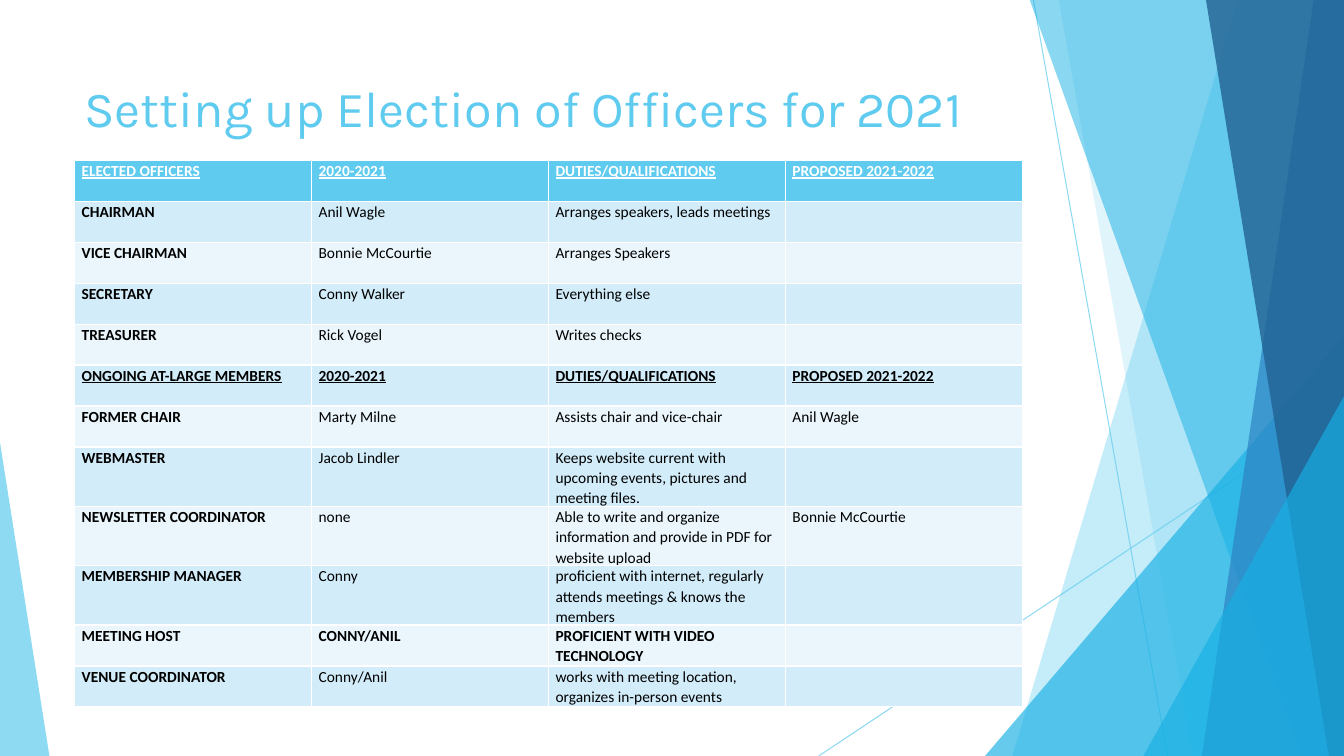
"""Build the slide that lists officers, duties and proposals for the 2021 election."""
from dataclasses import astuple, dataclass

from lxml.etree import SubElement
from pptx import Presentation
from pptx.dml.color import RGBColor
from pptx.enum.shapes import MSO_CONNECTOR, MSO_SHAPE
from pptx.enum.text import MSO_ANCHOR
from pptx.oxml.ns import qn
from pptx.shapes.autoshape import Shape
from pptx.shapes.connector import Connector
from pptx.shapes.shapetree import SlideShapes
from pptx.table import _Cell
from pptx.util import Inches, Pt

WIDTH, HEIGHT = 13.33, 7.5
LEFT, CONTENT_WIDTH = 0.74, 9.4
SKY, CYAN, BLUE, NAVY = "5FCBEF", "17B0E4", "2E83C3", "226292"
WHITE, BLACK = "FFFFFF", "000000"
BANDS = ("EAF6FC", "D2ECF9")


@dataclass
class Ray:
    start: tuple[float, float]
    end: tuple[float, float]


@dataclass
class Pane:
    top_x: float
    bottom_x: float
    color: str
    opacity: int


@dataclass
class Wedge:
    left: float
    top: float
    width: float
    apex: float
    color: str
    opacity: int


@dataclass
class Office:
    role: str
    holder: str
    duties: str
    proposed: str = ""


RAYS = [Ray((10.25, 0), (11.58, HEIGHT)), Ray((WIDTH, 4.03), (8.12, HEIGHT))]
FACETS = [
    Pane(12.28, 10.04, SKY, 36),
    Pane(10.5, 11.83, SKY, 20),
    Wedge(9.77, 3.33, 3.56, 1, CYAN, 66),
    Pane(10.21, 12.91, CYAN, 50),
    Pane(13.03, 11.92, BLUE, 70),
    Pane(11.96, 13.18, NAVY, 80),
    Wedge(11.34, 3.93, 1.99, 1, CYAN, 66),
    Wedge(0, 4.39, 0.49, 0, SKY, 70),
]
COLUMN_HEADS = ("2020-2021", "DUTIES/QUALIFICATIONS", "PROPOSED 2021-2022")
ELECTED = Office("ELECTED OFFICERS", *COLUMN_HEADS)
AT_LARGE = Office("ONGOING AT-LARGE MEMBERS", *COLUMN_HEADS)
HOST = Office("MEETING HOST", "CONNY/ANIL", "PROFICIENT WITH VIDEO TECHNOLOGY")
OFFICES = [
    ELECTED,
    Office("CHAIRMAN", "Anil Wagle", "Arranges speakers, leads meetings"),
    Office("VICE CHAIRMAN", "Bonnie McCourtie", "Arranges Speakers"),
    Office("SECRETARY", "Conny Walker", "Everything else"),
    Office("TREASURER", "Rick Vogel", "Writes checks"),
    AT_LARGE,
    Office("FORMER CHAIR", "Marty Milne", "Assists chair and vice-chair", "Anil Wagle"),
    Office("WEBMASTER", "Jacob Lindler",
           "Keeps website current with upcoming events, pictures and meeting files."),
    Office("NEWSLETTER COORDINATOR", "none",
           "Able to write and organize information and provide in PDF for website upload",
           "Bonnie McCourtie"),
    Office("MEMBERSHIP MANAGER", "Conny",
           "proficient with internet, regularly attends meetings & knows the members"),
    HOST,
    Office("VENUE COORDINATOR", "Conny/Anil",
           "works with meeting location, organizes in-person events"),
]


def rgb(color: str) -> RGBColor:
    return RGBColor.from_string(color)


def set_opacity(part: Shape | Connector, percent: int) -> None:
    for color in part._element.spPr.iter(qn("a:srgbClr")):
        SubElement(color, qn("a:alpha"), val=str(percent * 1000))


def draw_ray(shapes: SlideShapes, ray: Ray) -> None:
    line = shapes.add_connector(
        MSO_CONNECTOR.STRAIGHT, *map(Inches, ray.start + ray.end))
    line.line.color.rgb = rgb(SKY)
    line.line.width = Pt(0.75)
    set_opacity(line, 70)
    SubElement(line._element.spPr, qn("a:effectLst"))


def pane_outline(shapes: SlideShapes, pane: Pane) -> Shape:
    top = Inches(-0.01)
    right, bottom = Inches(WIDTH), Inches(HEIGHT)
    builder = shapes.build_freeform(Inches(pane.top_x), top)
    builder.add_line_segments(
        [(right, top), (right, bottom), (Inches(pane.bottom_x), bottom)])
    return builder.convert_to_shape()


def wedge_outline(shapes: SlideShapes, wedge: Wedge) -> Shape:
    triangle = shapes.add_shape(
        MSO_SHAPE.ISOSCELES_TRIANGLE, Inches(wedge.left), Inches(wedge.top),
        Inches(wedge.width), Inches(HEIGHT - wedge.top))
    triangle.adjustments[0] = wedge.apex
    return triangle


def draw_facet(shapes: SlideShapes, facet: Pane | Wedge) -> None:
    outline = pane_outline if isinstance(facet, Pane) else wedge_outline
    shape = outline(shapes, facet)
    shape.shadow.inherit = False
    shape.line.fill.background()
    shape.fill.solid()
    shape.fill.fore_color.rgb = rgb(facet.color)
    set_opacity(shape, facet.opacity)


def draw_title(shapes: SlideShapes, wording: str) -> None:
    title = shapes.add_textbox(
        Inches(LEFT), Inches(0.67), Inches(CONTENT_WIDTH), Inches(0.78)).text_frame
    title.word_wrap = True
    title.vertical_anchor = MSO_ANCHOR.MIDDLE
    heading = title.paragraphs[0]
    heading.text = wording
    heading.font.name = "Karla"
    heading.font.size = Pt(36)
    heading.font.color.rgb = rgb(SKY)


def fill_cell(cell: _Cell, wording: str, fill: str, color: str,
              bold: bool, underline: bool) -> None:
    cell.fill.solid()
    cell.fill.fore_color.rgb = rgb(fill)
    cell.margin_left = cell.margin_right = Inches(0.07)
    cell.margin_top = cell.margin_bottom = 0
    entry = cell.text_frame.paragraphs[0]
    entry.text = wording
    entry.line_spacing = 1.07
    entry.font.name = "Calibri"
    entry.font.size = Pt(11)
    entry.font.bold = bold
    entry.font.underline = underline
    entry.font.color.rgb = rgb(color)


def draw_offices(shapes: SlideShapes, offices: list[Office]) -> None:
    table = shapes.add_table(
        len(offices), 4, Inches(LEFT), Inches(1.59),
        Inches(CONTENT_WIDTH), Inches(4.88)).table
    for row, office in enumerate(offices):
        top_row = office is ELECTED
        section = office in (ELECTED, AT_LARGE)
        for column, wording in enumerate(astuple(office)):
            fill_cell(
                table.cell(row, column), wording,
                fill=SKY if top_row else BANDS[row % 2],
                color=WHITE if top_row else BLACK,
                bold=column == 0 or section or office is HOST,
                underline=section)


def main() -> None:
    presentation = Presentation()
    presentation.slide_width = Inches(WIDTH)
    presentation.slide_height = Inches(HEIGHT)
    shapes = presentation.slides.add_slide(presentation.slide_layouts[6]).shapes
    for ray in RAYS:
        draw_ray(shapes, ray)
    for facet in FACETS:
        draw_facet(shapes, facet)
    draw_title(shapes, "Setting up Election of Officers for 2021")
    draw_offices(shapes, OFFICES)
    presentation.save("out.pptx")


if __name__ == "__main__":
    main()
